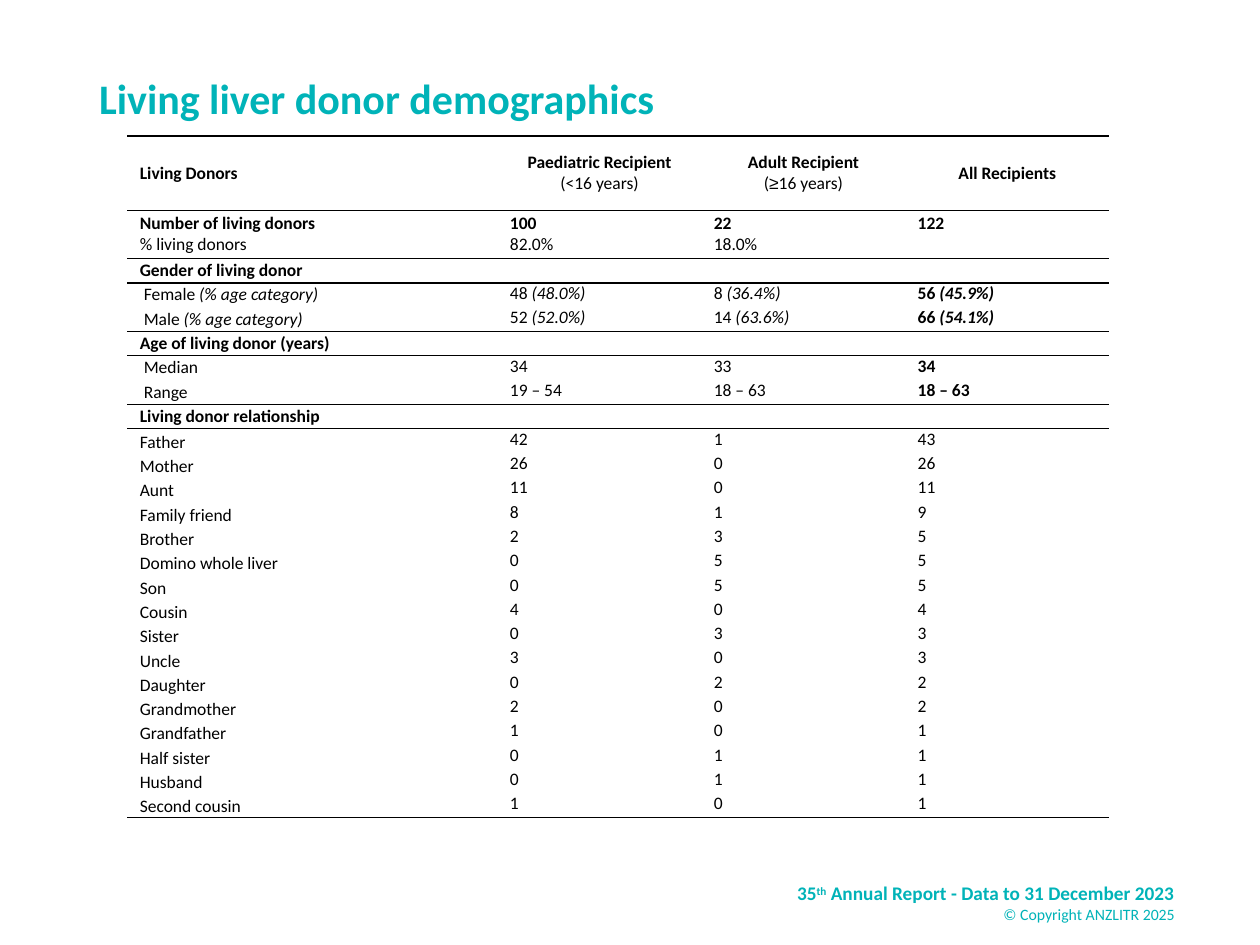
import lxml.etree
import pptx
import pptx.dml.color
import pptx.enum.text
import pptx.oxml.ns
import pptx.util

Cm, Pt = pptx.util.Cm, pptx.util.Pt
ALIGN = pptx.enum.text.PP_ALIGN
ANCHOR = pptx.enum.text.MSO_ANCHOR
qn = pptx.oxml.ns.qn

TEAL = pptx.dml.color.RGBColor(0x00, 0xB3, 0xB8)
BLACK = pptx.dml.color.RGBColor(0, 0, 0)
NO_GRID_STYLE = "{2D5ABB26-0587-4C30-8999-92F81FD0307C}"

COLUMN_WIDTHS = [7.46, 4.11, 4.11, 4.11]
HEADER_HEIGHT, COUNT_HEIGHT, ROW_HEIGHT = 1.5, 0.97, 0.49

HEADINGS = [
    ("Paediatric Recipient", [("(<16 years)",)]),
    ("Adult Recipient", [("(",), ("≥", "", "Arial"), ("16 years)",)]),
    ("All Recipients", None),
]
COUNTS = [
    ("Number of living donors", "% living donors"),
    ("100", "82.0%"),
    ("22", "18.0%"),
    ("122", None),
]
GENDERS = [
    ("Female", [("48", "48.0%"), ("8", "36.4%"), ("56", "45.9%")]),
    ("Male", [("52", "52.0%"), ("14", "63.6%"), ("66", "54.1%")]),
]
AGES = [
    ("Median", ["34", "33", "34"]),
    ("Range", ["19 – 54", "18 – 63", "18 – 63"]),
]
RELATIONSHIPS = [
    ("Father", 42, 1, 43),
    ("Mother", 26, 0, 26),
    ("Aunt", 11, 0, 11),
    ("Family friend", 8, 1, 9),
    ("Brother", 2, 3, 5),
    ("Domino whole liver", 0, 5, 5),
    ("Son", 0, 5, 5),
    ("Cousin", 4, 0, 4),
    ("Sister", 0, 3, 3),
    ("Uncle", 3, 0, 3),
    ("Daughter", 0, 2, 2),
    ("Grandmother", 2, 0, 2),
    ("Grandfather", 1, 0, 1),
    ("Half sister", 0, 1, 1),
    ("Husband", 0, 1, 1),
    ("Second cousin", 1, 0, 1),
]


def add_span(para, text, style="", font="Calibri", size=10, color=BLACK):
    """Add one run; style holds "b" for bold and "i" for italic."""
    span = para.add_run()
    span.text = text
    span.font.name = font
    span.font.size = Pt(size)
    span.font.bold = "b" in style
    span.font.italic = "i" in style
    span.font.color.rgb = color
    return span


def add_box(page, left, top, width, height, anchor):
    box = page.shapes.add_textbox(Cm(left), Cm(top), Cm(width), Cm(height))
    box.text_frame.word_wrap = True
    box.text_frame.vertical_anchor = anchor
    return box.text_frame


def add_title(page):
    frame = add_box(page, 1.75, 0.69, 21.9, 2.67, ANCHOR.MIDDLE)
    para = frame.paragraphs[0]
    para.line_spacing = 0.9
    add_span(para, "Living liver donor demographics", "b", size=24, color=TEAL)


def add_footer(page):
    frame = add_box(page, 15.37, 17.65, 8.56, 1.02, ANCHOR.TOP)
    report, rights = frame.paragraphs[0], frame.add_paragraph()
    report.alignment = rights.alignment = ALIGN.RIGHT
    add_span(report, "35", "b", size=11, color=TEAL)
    ordinal = add_span(report, "th", "b", size=11, color=TEAL)
    ordinal._r.get_or_add_rPr().set("baseline", "30000")
    add_span(report, " Annual Report - Data to 31 December 2023", "b", size=11, color=TEAL)
    add_span(rights, "© Copyright ANZLITR 2025", size=9, color=TEAL)


def fill_cell(cell, lines, anchor=ANCHOR.TOP, align=ALIGN.JUSTIFY, indent=0):
    """Write paragraphs, each a list of run tuples (text, style, font)."""
    cell.vertical_anchor = anchor
    frame = cell.text_frame
    for index, spans in enumerate(lines):
        para = frame.add_paragraph() if index else frame.paragraphs[0]
        para.alignment = align
        if indent:
            para._p.get_or_add_pPr().set("marL", str(Cm(indent)))
        for span in spans:
            add_span(para, *span)


def prepare_cell(cell):
    """Clear the fill, tighten the margins and keep an empty cell low."""
    cell.fill.background()
    cell.margin_left = cell.margin_right = Cm(0.25)
    cell.margin_top = cell.margin_bottom = 0
    end = lxml.etree.SubElement(cell.text_frame.paragraphs[0]._p, qn("a:endParaRPr"))
    end.set("sz", "1000")


def rule_cell(cell, top, bottom):
    properties = cell._tc.get_or_add_tcPr()
    for wanted, tag in ((bottom, "a:lnB"), (top, "a:lnT")):
        if wanted:
            line = lxml.etree.Element(qn(tag), w=str(Pt(1)))
            fill = lxml.etree.SubElement(line, qn("a:solidFill"))
            lxml.etree.SubElement(fill, qn("a:srgbClr"), val=str(BLACK))
            properties.insert(0, line)


def add_table(page, row_count):
    frame = page.shapes.add_table(
        row_count, len(COLUMN_WIDTHS), Cm(2.57), Cm(2.74),
        Cm(sum(COLUMN_WIDTHS)), Cm(13.74))
    table = frame.table
    table.first_row = table.horz_banding = False
    table._tbl.tblPr.find(qn("a:tableStyleId")).text = NO_GRID_STYLE
    for column, width in zip(table.columns, COLUMN_WIDTHS):
        column.width = Cm(width)
    for index, row in enumerate(table.rows):
        row.height = Cm({0: HEADER_HEIGHT, 1: COUNT_HEIGHT}.get(index, ROW_HEIGHT))
        for cell in row.cells:
            prepare_cell(cell)
    return table


def fill_header(table):
    fill_cell(table.cell(0, 0), [[("Living Donors", "b")]], ANCHOR.MIDDLE)
    for column, (heading, ages) in enumerate(HEADINGS, 1):
        lines = [[(heading, "b")]] + ([ages] if ages else [])
        fill_cell(table.cell(0, column), lines, ANCHOR.MIDDLE, ALIGN.CENTER)


def fill_counts(table):
    for column, (count, share) in enumerate(COUNTS):
        cell = table.cell(1, column)
        if share:
            fill_cell(cell, [[(count, "b")], [(share,)]], ANCHOR.MIDDLE)
        else:
            cell.margin_top = Cm(0.05)
            fill_cell(cell, [[(count, "b")]])


def fill_section(table, first, title, rows, anchor, indent=0):
    """Write a bold title row, then rows of label runs and value runs."""
    fill_cell(table.cell(first, 0), [[(title, "b")]], ANCHOR.MIDDLE)
    for row, (label, values) in enumerate(rows, first + 1):
        fill_cell(table.cell(row, 0), [label], anchor, indent=indent)
        for column, spans in enumerate(values, 1):
            fill_cell(table.cell(row, column), [spans])


def main():
    deck = pptx.Presentation()
    deck.slide_width, deck.slide_height = Cm(25.4), Cm(19.05)
    page = deck.slides.add_slide(deck.slide_layouts[6])
    add_footer(page)
    add_title(page)

    total_bold = ("", "", "b")
    genders = [
        ([(name + " ",), ("(% age category)", "i")],
         [[(count + " ", bold), (f"({share})", bold + "i")]
          for (count, share), bold in zip(values, total_bold)])
        for name, values in GENDERS]
    ages = [
        ([(name,)], [[(value, bold)] for value, bold in zip(values, total_bold)])
        for name, values in AGES]
    relationships = [
        ([(name,)], [[(str(value),)] for value in values])
        for name, *values in RELATIONSHIPS]
    sections = [
        ("Gender of living donor", genders, ANCHOR.MIDDLE, 0.08),
        ("Age of living donor (years)", ages, ANCHOR.MIDDLE, 0.08),
        ("Living donor relationship", relationships, ANCHOR.BOTTOM),
    ]

    row_count = 2 + sum(1 + len(section[1]) for section in sections)
    table = add_table(page, row_count)
    fill_header(table)
    fill_counts(table)
    starts, first = [0, 1], 2
    for section in sections:
        fill_section(table, first, *section)
        starts.append(first)
        first += 1 + len(section[1])
    starts.append(row_count)
    for index, row in enumerate(table.rows):
        for cell in row.cells:
            rule_cell(cell, index in starts, index + 1 in starts)
    deck.save("out.pptx")


if __name__ == "__main__":
    main()
